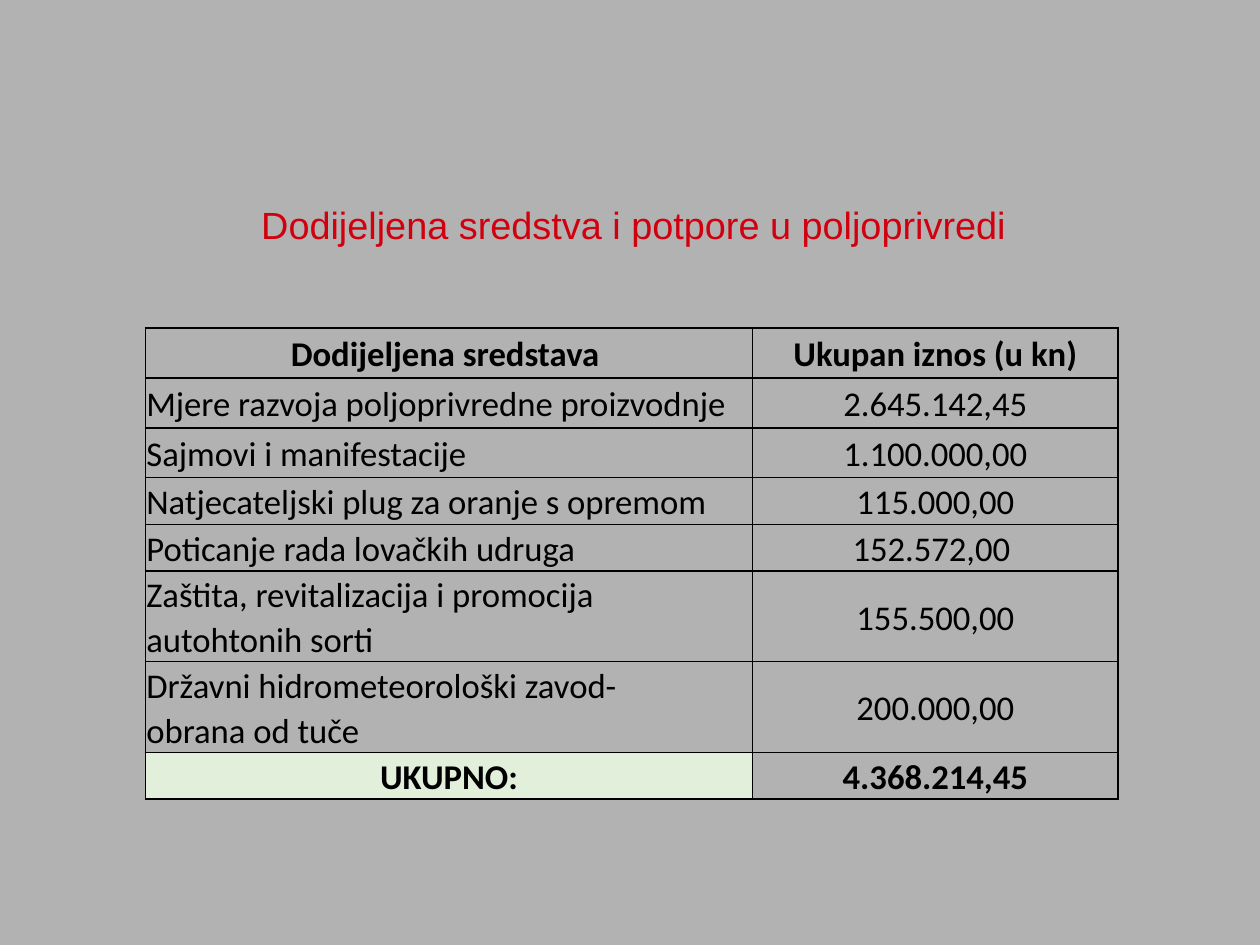
from dataclasses import dataclass

from pptx import Presentation
from pptx.dml.color import RGBColor
from pptx.enum.text import MSO_ANCHOR, PP_ALIGN
from pptx.oxml import parse_xml
from pptx.oxml.ns import nsdecls
from pptx.util import Inches, Pt

UNIT = 0.1
WIDE = 111
HIGH = WIDE * 3 / 4


@dataclass(frozen=True)
class Theme:
    back: str = "B2B2B2"
    title: str = "D1000E"
    ink: str = "000000"
    total: str = "E2EFDA"
    head_font: str = "Arial"
    body_font: str = "Calibri"
    head_size: int = 24
    body_size: int = 22
    rule: int = 1


THEME = Theme()
HEADER = ("Dodijeljena sredstava ", "Ukupan iznos (u kn)")
GRANTS = [
    ("Mjere razvoja poljoprivredne proizvodnje", "2.645.142,45"),
    ("Sajmovi i manifestacije", "1.100.000,00"),
    ("Natjecateljski plug za oranje s opremom", "115.000,00"),
    ("Poticanje rada lovačkih udruga", "152.572,00 "),
    ("Zaštita, revitalizacija i promocija autohtonih sorti", "155.500,00"),
    ("Državni hidrometeorološki zavod-\nobrana od tuče", "200.000,00"),
]
TOTAL = ("UKUPNO:", "4.368.214,45")
COLS = (53.5, 32.2)
ROWS = (4.4,) * 3 + (4.1,) * 2 + (8,) * 2 + (4.1,)


def grid(*counts):
    """Turn counts of grid units into lengths."""
    return [Inches(count * UNIT) for count in counts]


def write(frame, text, font=THEME.body_font, size=THEME.body_size,
          color=THEME.ink, bold=False, align=PP_ALIGN.CENTER, spacing=None):
    """Fill a text frame, one paragraph for each line of text."""
    frame.word_wrap = True
    frame.text = text
    for para in frame.paragraphs:
        para.alignment = align
        para.line_spacing = spacing
        for run in para.runs:
            run.font.name = font
            run.font.size = Pt(size)
            run.font.bold = bold
            run.font.color.rgb = RGBColor.from_string(color)


def add_title(slide, text):
    box = slide.shapes.add_textbox(*grid(12.2, 17.3, 87.2, 6.6))
    write(box.text_frame, text, font=THEME.head_font,
          size=THEME.head_size, color=THEME.title)


def add_edges(cell):
    """Draw the four borders; they must come before the cell's fill."""
    props = cell._tc.get_or_add_tcPr()
    for side in ("lnL", "lnR", "lnT", "lnB"):
        props.append(parse_xml(
            f'<a:{side} {nsdecls("a")} w="{Pt(THEME.rule)}"><a:solidFill>'
            f'<a:srgbClr val="{THEME.ink}"/></a:solidFill></a:{side}>'))


def fill_cell(cell, text, tint=None, **style):
    cell.margin_left = cell.margin_right = cell.margin_top = Inches(0.01)
    cell.margin_bottom = 0
    cell.vertical_anchor = MSO_ANCHOR.MIDDLE
    add_edges(cell)
    if tint:
        cell.fill.solid()
        cell.fill.fore_color.rgb = RGBColor.from_string(tint)
    else:
        cell.fill.background()
    write(cell.text_frame, text, spacing=1.07, **style)


def add_grid(slide):
    lines = [HEADER, *GRANTS, TOTAL]
    table = slide.shapes.add_table(
        len(lines), len(COLS),
        *grid(12.8, 28.9, sum(COLS), sum(ROWS))).table
    table.first_row = table.horz_banding = False
    for col, width in zip(table.columns, grid(*COLS)):
        col.width = width
    for row, height in zip(table.rows, grid(*ROWS)):
        row.height = height
    for r, line in enumerate(lines):
        strong = line in (HEADER, TOTAL)
        for c, text in enumerate(line):
            label = c == 0
            fill_cell(
                table.cell(r, c), text, bold=strong,
                tint=THEME.total if label and line is TOTAL else None,
                align=PP_ALIGN.LEFT if label and not strong
                else PP_ALIGN.CENTER)


def main():
    deck = Presentation()
    deck.slide_width, deck.slide_height = grid(WIDE, HIGH)
    slide = deck.slides.add_slide(deck.slide_layouts[6])
    slide.background.fill.solid()
    slide.background.fill.fore_color.rgb = RGBColor.from_string(THEME.back)
    add_title(slide, "Dodijeljena sredstva i potpore u poljoprivredi")
    add_grid(slide)
    deck.save("out.pptx")


if __name__ == "__main__":
    main()
